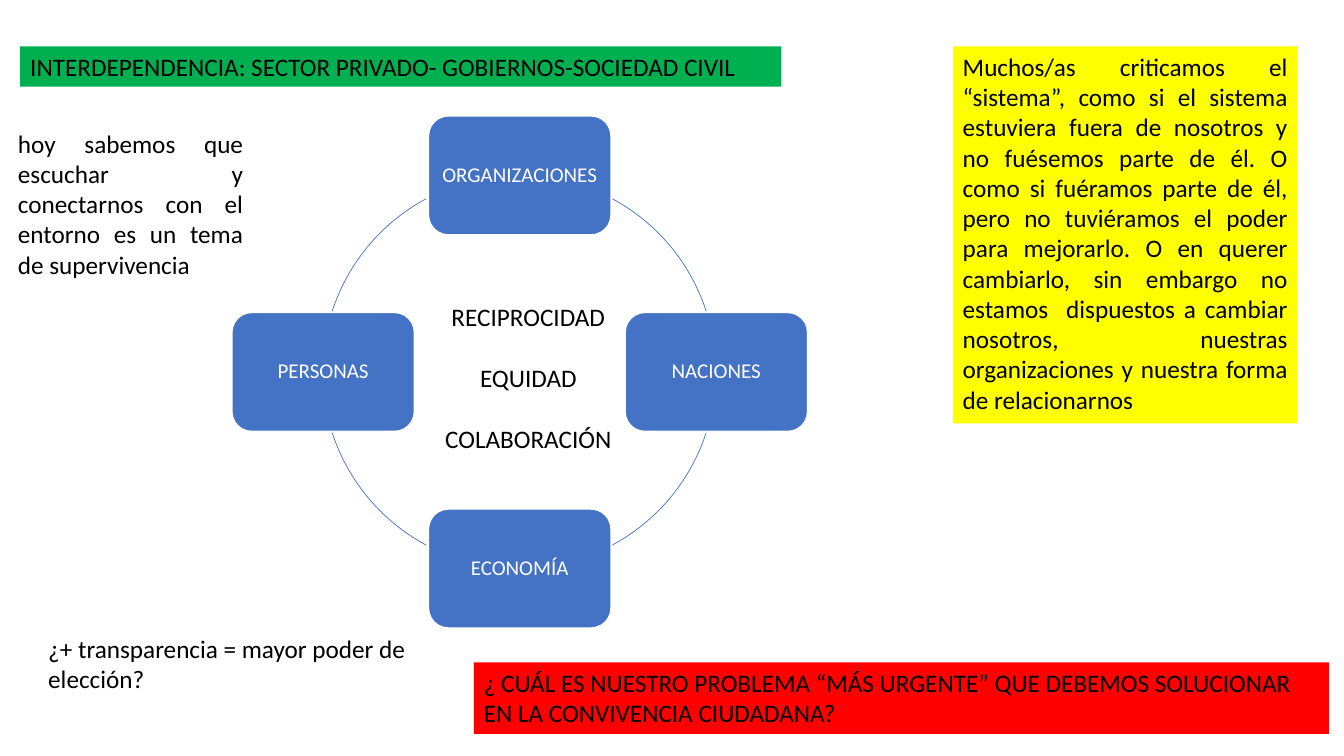
"""Build the slide on interdependence between private sector, governments and civil society."""
from dataclasses import dataclass

from pptx import Presentation
from pptx import util as u
from pptx.dml.color import RGBColor
from pptx.enum import shapes, text

PX = 9144


@dataclass(frozen=True)
class Theme:
    font: str = "Calibri"
    body_size: int = 18
    node_size: int = 15
    ink: str = "000000"
    paper: str = "FFFFFF"
    blue: str = "4472C4"
    green: str = "00B050"
    yellow: str = "FFFF00"
    red: str = "FF0000"


@dataclass(frozen=True)
class Box:
    left: int
    top: int
    width: int
    height: int

    def emu(self) -> list[u.Emu]:
        return [u.Emu(n * PX) for n in (self.left, self.top, self.width, self.height)]


@dataclass(frozen=True)
class Note:
    box: Box
    lines: tuple[str, ...]
    fill: str | None = None
    align: text.PP_ALIGN = text.PP_ALIGN.LEFT
    gap: int = 0


@dataclass(frozen=True)
class Node:
    label: str
    across: int
    down: int
    arc_start: float


THEME = Theme()
CENTER_X, CENTER_Y, RADIUS = 515, 369, 195
NODE_WIDTH, NODE_HEIGHT, NODE_MARGIN = 181, 118, 6
ARC_SWEEP = 43.7
ADJUSTMENT_PER_DEGREE = 0.6

TITLE = Note(Box(20, 46, 755, 40),
             ("INTERDEPENDENCIA: SECTOR PRIVADO- GOBIERNOS-SOCIEDAD CIVIL",), THEME.green)

NODES = (
    Node("ORGANIZACIONES", 0, -1, 298.3),
    Node("NACIONES", 1, 0, 18),
    Node("ECONOMÍA", 0, 1, 118.3),
    Node("PERSONAS", -1, 0, 198),
)

NOTES = (
    Note(Box(420, 294, 208, 162), ("RECIPROCIDAD", "EQUIDAD", "COLABORACIÓN"),
         align=text.PP_ALIGN.CENTER, gap=22),
    Note(Box(945, 46, 342, 374),
         ("Muchos/as criticamos el “sistema”, como si el sistema estuviera fuera de nosotros "
          "y no fuésemos parte de él. O como si fuéramos parte de él, pero no tuviéramos el "
          "poder para mejorarlo. O en querer cambiarlo, sin embargo no estamos  dispuestos a "
          "cambiar nosotros, nuestras organizaciones y nuestra forma de relacionarnos",),
         THEME.yellow, text.PP_ALIGN.JUSTIFY),
    Note(Box(8, 122, 243, 162),
         ("hoy sabemos que escuchar y conectarnos con el entorno es un tema de supervivencia",),
         align=text.PP_ALIGN.JUSTIFY),
    Note(Box(38, 623, 382, 71), ("¿+ transparencia = mayor poder de elección?",)),
    Note(Box(470, 657, 848, 71),
         ("¿ CUÁL ES NUESTRO PROBLEMA “MÁS URGENTE” QUE DEBEMOS SOLUCIONAR "
          "EN LA CONVIVENCIA CIUDADANA?",), THEME.red),
)


def rgb(color: str) -> RGBColor:
    return RGBColor.from_string(color)


def set_font(paragraph, size: int, color: str) -> None:
    paragraph.font.name = THEME.font
    paragraph.font.size = u.Pt(size)
    paragraph.font.color.rgb = rgb(color)


def fill_note(shape, note: Note) -> None:
    shape.left, shape.top, shape.width, shape.height = note.box.emu()
    if note.fill:
        shape.fill.solid()
        shape.fill.fore_color.rgb = rgb(note.fill)
    frame = shape.text_frame
    frame.text = "\n".join(note.lines)
    frame.word_wrap = True
    frame.auto_size = text.MSO_AUTO_SIZE.NONE
    frame.vertical_anchor = text.MSO_ANCHOR.TOP
    for index, paragraph in enumerate(frame.paragraphs):
        paragraph.alignment = note.align
        if index and note.gap:
            paragraph.space_before = u.Pt(note.gap)
        set_font(paragraph, THEME.body_size, THEME.ink)


def add_arc(slide, node: Node) -> None:
    circle = Box(CENTER_X - RADIUS, CENTER_Y - RADIUS, 2 * RADIUS, 2 * RADIUS)
    arc = slide.shapes.add_shape(shapes.MSO_SHAPE.ARC, *circle.emu())
    arc.adjustments[0] = node.arc_start * ADJUSTMENT_PER_DEGREE
    arc.adjustments[1] = (node.arc_start + ARC_SWEEP) * ADJUSTMENT_PER_DEGREE
    arc.shadow.inherit = False
    arc.fill.background()
    arc.line.color.rgb = rgb(THEME.blue)
    arc.line.width = u.Pt(0.5)


def add_node(slide, node: Node) -> None:
    box = Box(CENTER_X + node.across * RADIUS - NODE_WIDTH // 2,
              CENTER_Y + node.down * RADIUS - NODE_HEIGHT // 2, NODE_WIDTH, NODE_HEIGHT)
    shape = slide.shapes.add_shape(shapes.MSO_SHAPE.ROUNDED_RECTANGLE, *box.emu())
    shape.shadow.inherit = False
    shape.fill.solid()
    shape.fill.fore_color.rgb = rgb(THEME.blue)
    shape.line.color.rgb = rgb(THEME.paper)
    shape.line.width = u.Pt(1)
    frame = shape.text_frame
    frame.margin_left = frame.margin_right = u.Emu(NODE_MARGIN * PX)
    frame.vertical_anchor = text.MSO_ANCHOR.MIDDLE
    frame.text = node.label
    paragraph = frame.paragraphs[0]
    paragraph.alignment = text.PP_ALIGN.CENTER
    paragraph.line_spacing = 0.9
    set_font(paragraph, THEME.node_size, THEME.paper)


def main() -> None:
    presentation = Presentation()
    presentation.slide_width, presentation.slide_height = u.Emu(1333 * PX), u.Emu(750 * PX)
    slide = presentation.slides.add_slide(presentation.slide_layouts.get_by_name("Title Only"))
    fill_note(slide.shapes.title, TITLE)
    for node in NODES:
        add_arc(slide, node)
        add_node(slide, node)
    for note in NOTES:
        fill_note(slide.shapes.add_textbox(*note.box.emu()), note)
    presentation.save("out.pptx")


if __name__ == "__main__":
    main()
